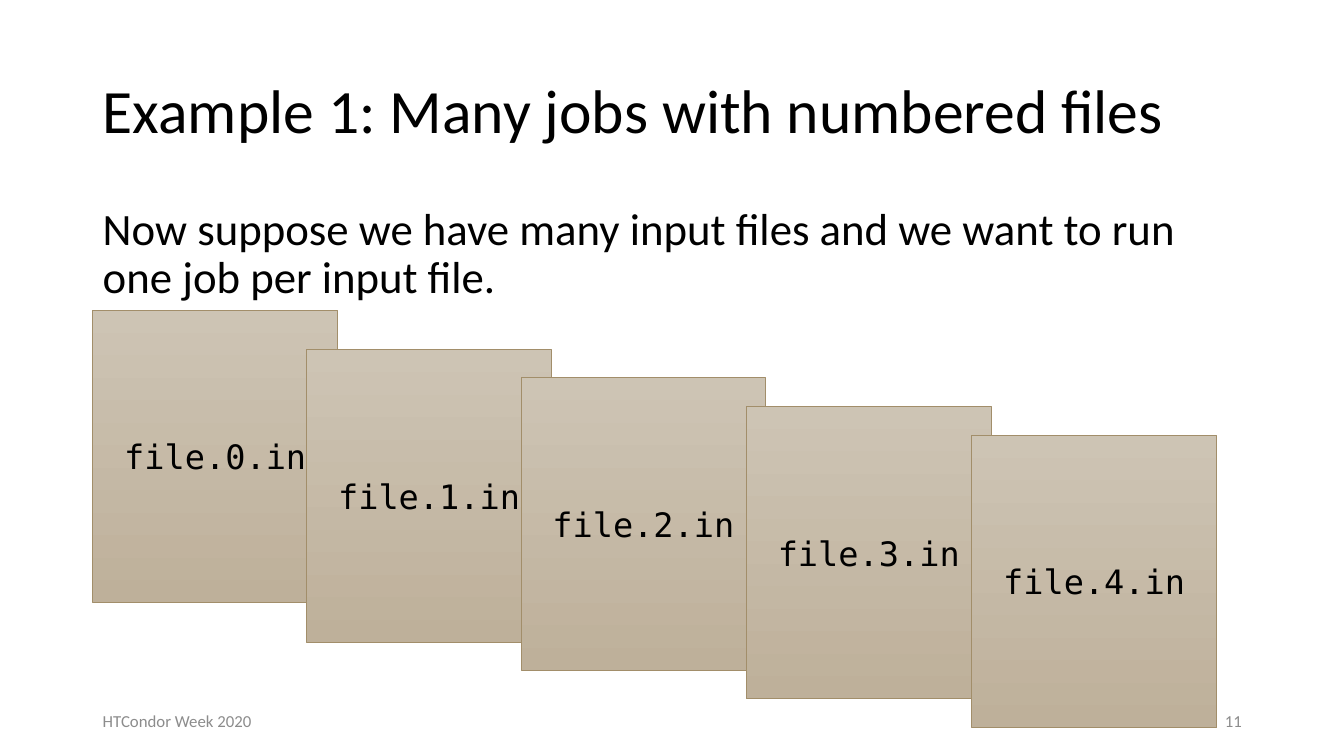
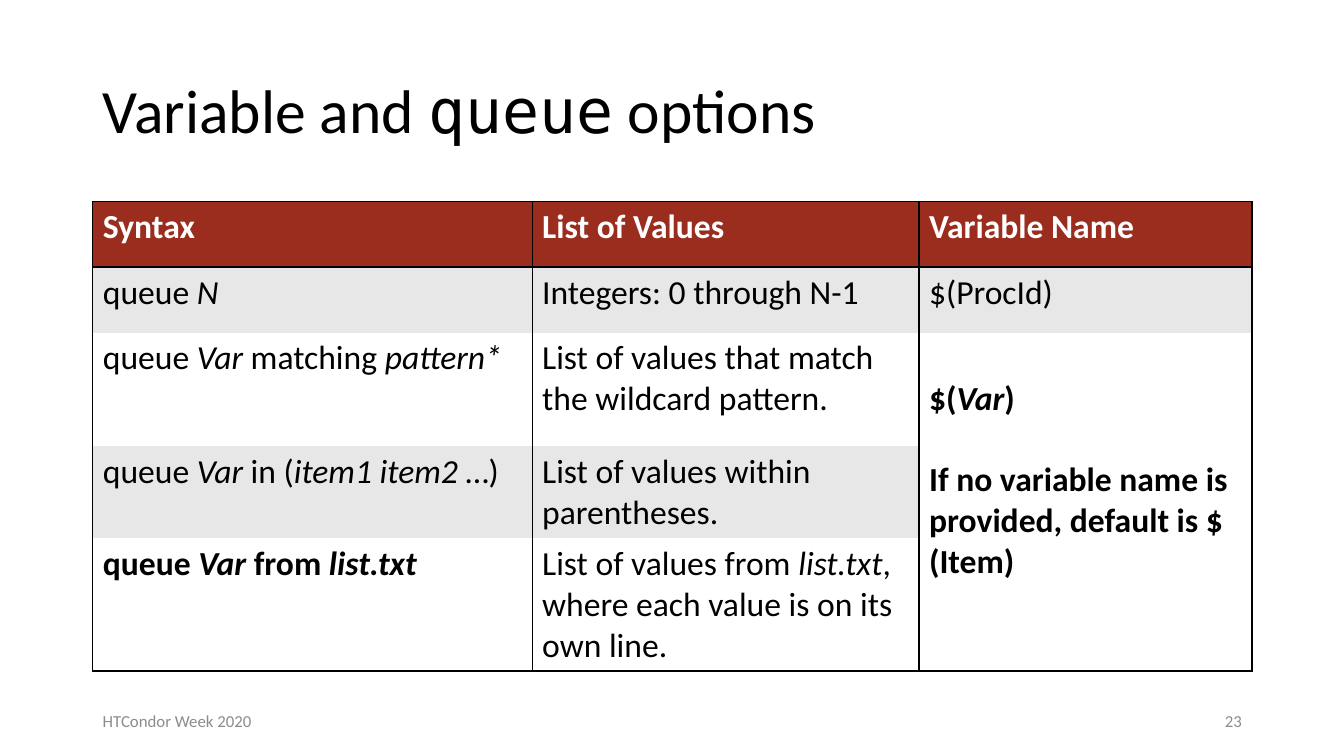
from dataclasses import dataclass

from lxml.etree import SubElement
from pptx import Presentation
from pptx.dml.color import RGBColor as Rgb
from pptx.enum.shapes import MSO_SHAPE as Shape
from pptx.enum.text import MSO_ANCHOR as Anchor, PP_ALIGN as Align
from pptx.oxml.ns import qn
from pptx.util import Cm, Pt


@dataclass(frozen=True)
class Theme:
    sans: str = "Calibri"
    mono: str = "DejaVu Sans Mono"
    black: str = "000000"
    white: str = "FFFFFF"
    grey: str = "8C8C8C"
    red: str = "9B2D1F"
    band: str = "E7E7E7"
    sand: tuple = ("CDC4B4", "BEB09A")
    edge: str = "A28E6A"
    title: int = 44
    body: int = 32
    cell: int = 24
    foot: int = 12


T = Theme()

# Content: a run is (text, style), with b = bold, i = italic, m = mono
EVENT = "HTCondor Week 2020"
FILES = {
    "title": [("Example 1: Many jobs with numbered files", "")],
    "page": "11",
    "body": [("Now suppose we have many input files and we want to run "
              "one job per input file.", "")],
    # left and top of each card, in cm
    "cards": [
        ("file.0.in", 2.34, 7.82),
        ("file.1.in", 7.73, 8.81),
        ("file.2.in", 13.13, 9.52),
        ("file.3.in", 18.81, 10.24),
        ("file.4.in", 24.49, 10.97),
    ],
}
QUEUE = {
    "title": [("Variable and ", ""), ("queue", "m"), (" options", "")],
    "page": "23",
    "head": ["Syntax", "List of Values", "Variable Name"],
    "rows": [
        ([("queue ", ""), ("N", "i")],
         [("Integers: 0 through N-1", "")]),
        ([("queue ", ""), ("Var", "i"), (" matching ", ""), ("pattern*", "i")],
         [("List of values that match the wildcard pattern.", "")]),
        ([("queue ", ""), ("Var", "i"), (" in (", ""),
          ("item1 item2", "i"), (" …)", "")],
         [("List of values within parentheses.", "")]),
        ([("queue ", "b"), ("Var", "bi"), (" from ", "b"), ("list.txt", "bi")],
         [("List of values from ", ""), ("list.txt", "i"),
          (", where each value is on its own line.", "")]),
    ],
    "proc": [("$(ProcId)", "")],
    "var": [[("$(", "b"), ("Var", "bi"), (")", "b")],
            [("If no variable name is provided, default is $(Item)", "b")]],
}

# Layout, in cm
LEFT, WIDE = 2.34, 29.21
CARD = 6.17, 7.37
COLS = 11.07, 9.75, 8.39
ROWS = 1.65, 1.65, 2.87, 2.31, 3.35
RULES = 1, 2, 0, 0, 0, 1  # line width in points above each row, then below
LINE = 29  # one line of cell text, in points


def write(par, runs, size, color=T.black):
    for text, style in runs:
        run = par.add_run()
        run.text = text
        font = run.font
        font.size = Pt(size)
        font.name = T.mono if "m" in style else T.sans
        font.color.rgb = Rgb.from_string(color)
        font.bold, font.italic = "b" in style, "i" in style


def label(slide, box, runs, size, color=T.black, anchor=Anchor.MIDDLE,
          align=Align.LEFT, space=1.0):
    frame = slide.shapes.add_textbox(*map(Cm, box)).text_frame
    frame.word_wrap = True
    frame.vertical_anchor = anchor
    par = frame.paragraphs[0]
    par.alignment, par.line_spacing = align, space
    write(par, runs, size, color)


def start(deck, data):
    """Add a slide with its title and footer."""
    slide = deck.slides.add_slide(deck.slide_layouts[6])
    label(slide, (LEFT, 1.02, WIDE, 3.68), data["title"], T.title, space=0.9)
    width = 7.62
    for left, text, align in ((LEFT, EVENT, Align.LEFT),
                              (LEFT + WIDE - width, data["page"], Align.RIGHT)):
        label(slide, (left, 17.65, width, 1.02), [(text, "")], T.foot,
              T.grey, align=align)
    return slide


def card(slide, name, left, top):
    box = slide.shapes.add_shape(Shape.RECTANGLE, Cm(left), Cm(top),
                                 *map(Cm, CARD))
    box.shadow.inherit = False
    box.fill.gradient()
    box.fill.gradient_angle = 270
    for stop, color in zip(box.fill.gradient_stops, T.sand):
        stop.color.rgb = Rgb.from_string(color)
    box.line.color.rgb = Rgb.from_string(T.edge)
    box.line.width = Pt(0.5)
    box.text_frame.vertical_anchor = Anchor.MIDDLE
    par = box.text_frame.paragraphs[0]
    par.alignment = Align.CENTER
    write(par, [(name, "m")], T.cell)


def paint(cell, fill, top, foot):
    """Set the borders, then the fill, of a table cell."""
    props = cell._tc.get_or_add_tcPr()
    for side, width in (("L", 1), ("R", 1), ("T", top), ("B", foot)):
        line = SubElement(props, qn(f"a:ln{side}"), w=str(Pt(width)))
        if width:
            solid = SubElement(line, qn("a:solidFill"))
            SubElement(solid, qn("a:srgbClr"), val=T.black)
        else:
            SubElement(line, qn("a:noFill"))
    cell.fill.solid()
    cell.fill.fore_color.rgb = Rgb.from_string(fill)


def grid(slide, data):
    table = slide.shapes.add_table(len(ROWS), len(COLS), Cm(LEFT), Cm(5.08),
                                   Cm(WIDE), Cm(sum(ROWS))).table
    for col, width in zip(table.columns, COLS):
        col.width = Cm(width)
    for row, height in zip(table.rows, ROWS):
        row.height = Cm(height)

    # Fills and rules; the last column is one cell from row 2 down
    last = len(COLS) - 1
    for r in range(len(ROWS)):
        for c in range(len(COLS)):
            tall = c == last and r > 1
            fill = T.red if r == 0 else T.band if r % 2 and not tall else T.white
            foot = RULES[-1] if tall else RULES[r + 1]
            paint(table.cell(r, c), fill, RULES[r], foot)
    var = table.cell(2, last)
    var.merge(table.cell(len(ROWS) - 1, last))

    # Words
    for c, text in enumerate(data["head"]):
        write(table.cell(0, c).text_frame.paragraphs[0], [(text, "b")],
              T.cell, T.white)
    for r, row in enumerate(data["rows"], 1):
        for c, runs in enumerate(row):
            write(table.cell(r, c).text_frame.paragraphs[0], runs, T.cell)
    write(table.cell(1, last).text_frame.paragraphs[0], data["proc"], T.cell)
    var.margin_top = Cm(0.13) + Pt(LINE)
    first, second = data["var"]
    frame = var.text_frame
    write(frame.paragraphs[0], first, T.cell)
    par = frame.add_paragraph()
    par.space_before = Pt(LINE)
    write(par, second, T.cell)


def main():
    deck = Presentation()
    deck.slide_width, deck.slide_height = Cm(33.87), Cm(19.05)

    # Numbered files
    slide = start(deck, FILES)
    label(slide, (LEFT, 5.08, WIDE, 12.09), FILES["body"], T.body,
          anchor=Anchor.TOP, space=0.9)
    for item in FILES["cards"]:
        card(slide, *item)

    # Queue options
    grid(start(deck, QUEUE), QUEUE)
    deck.save("out.pptx")


if __name__ == "__main__":
    main()
